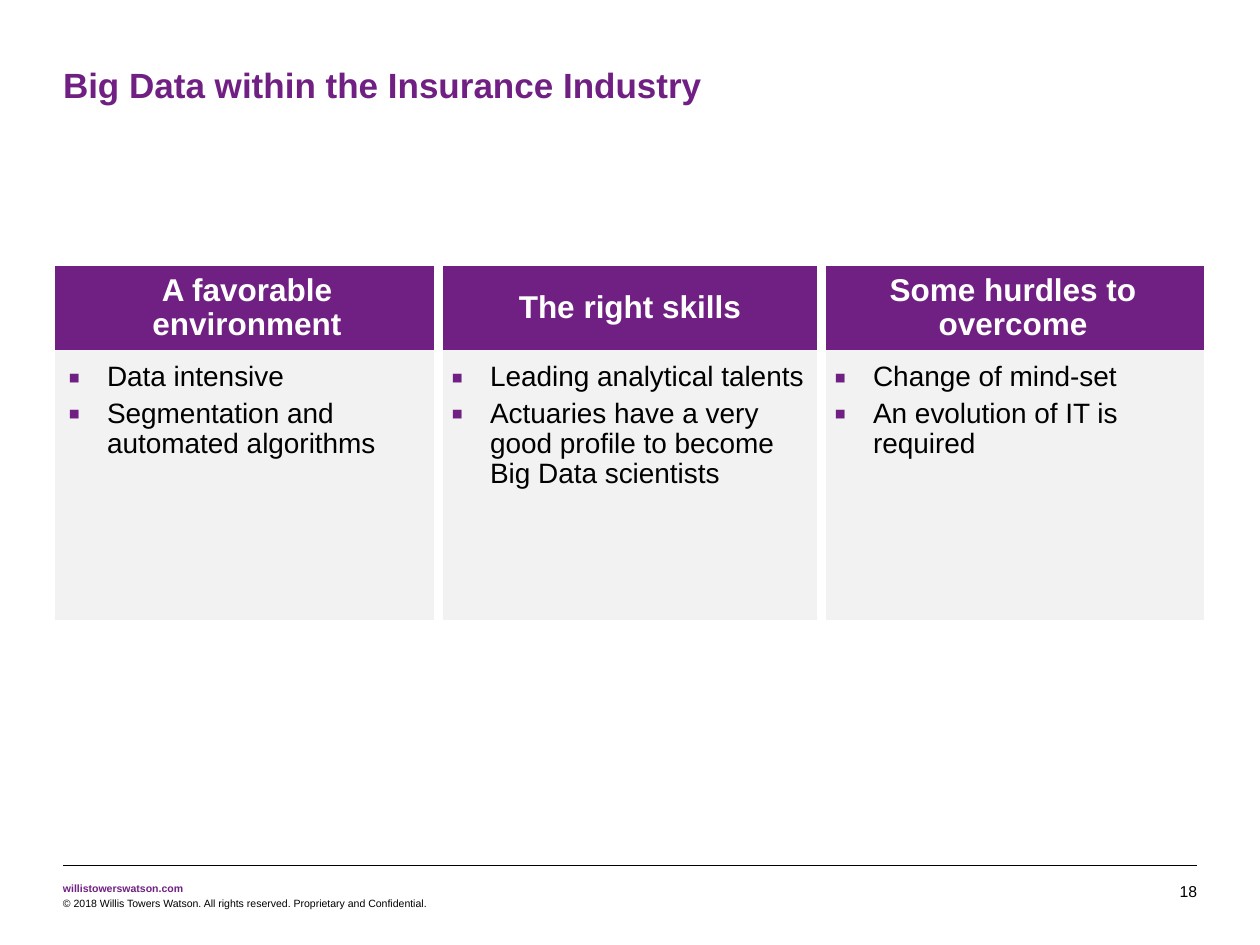
from pptx import Presentation
from pptx.dml.color import RGBColor
from pptx.enum.shapes import MSO_CONNECTOR
from pptx.enum.text import MSO_ANCHOR, MSO_AUTO_SIZE, PP_ALIGN
from pptx.oxml.ns import qn
from pptx.util import Inches, Pt
from lxml.etree import SubElement

PURPLE = RGBColor(0x70, 0x20, 0x82)
GREY = RGBColor(0xF2, 0xF2, 0xF2)
WHITE = RGBColor(0xFF, 0xFF, 0xFF)
BLACK = RGBColor(0, 0, 0)

prs = Presentation()
prs.slide_width, prs.slide_height = Inches(10), Inches(7.5)
slide = prs.slides.add_slide(prs.slide_layouts[5])
MARGIN = Inches(0.5)
CONTENT_WIDTH = prs.slide_width - 2 * MARGIN
FOOTER_TOP = Inches(7)


def write(frame, text, size, color=BLACK, bold=False, align=PP_ALIGN.LEFT,
          anchor=MSO_ANCHOR.TOP, inset=0, wrap=True, after=0, spacing=None,
          bulleted=False):
    """Fill a text frame, one paragraph for each line of text."""
    frame.word_wrap = wrap
    frame.vertical_anchor = anchor
    if inset is not None:
        frame.margin_left = frame.margin_right = inset
        frame.margin_top = frame.margin_bottom = inset
    for number, line in enumerate(text.split("\n")):
        paragraph = frame.add_paragraph() if number else frame.paragraphs[0]
        paragraph.alignment = align
        paragraph.space_before, paragraph.space_after = Pt(0), Pt(after)
        if spacing:
            paragraph.line_spacing = spacing
        if bulleted:
            paragraph.level = 2
            props = paragraph._p.get_or_add_pPr()
            props.set("marL", str(Inches(0.31)))
            props.set("indent", str(-Inches(0.31)))
            bullet_color = SubElement(props, qn("a:buClr"))
            SubElement(bullet_color, qn("a:srgbClr"), val=str(PURPLE))
            SubElement(props, qn("a:buSzPct"), val="125000")
            SubElement(props, qn("a:buFont"), typeface="Arial")
            SubElement(props, qn("a:buChar"), char="▪")
        run = paragraph.add_run()
        run.text = line
        run.font.name, run.font.size = "Arial", Pt(size)
        run.font.bold, run.font.color.rgb = bold, color


def add_white_border(cell, side):
    border = SubElement(cell._tc.get_or_add_tcPr(), qn("a:" + side), w=str(Pt(6)))
    fill = SubElement(border, qn("a:solidFill"))
    SubElement(fill, qn("a:srgbClr"), val=str(WHITE))


# Title
title = slide.shapes.title
title.left, title.top = MARGIN, MARGIN
title.width, title.height = CONTENT_WIDTH, Inches(0.34)
title.text_frame.auto_size = MSO_AUTO_SIZE.NONE
write(title.text_frame, "Big Data within the Insurance Industry", 20,
      color=PURPLE, bold=True)

# Three themes: heading above bullet points
themes = [
    ("A favorable environment",
     "Data intensive\nSegmentation and automated algorithms"),
    ("The right skills",
     "Leading analytical talents\n"
     "Actuaries have a very good profile to become Big Data scientists"),
    ("Some hurdles to overcome",
     "Change of mind-set\nAn evolution of IT is required"),
]
COLUMN_WIDTH = Inches(3.04)
HEADING_HEIGHT, POINTS_HEIGHT = Inches(0.67), Inches(2.14)
table_width = len(themes) * COLUMN_WIDTH
table = slide.shapes.add_table(
    2, len(themes), (prs.slide_width - table_width) // 2, Inches(2.11),
    table_width, HEADING_HEIGHT + POINTS_HEIGHT).table
table.first_row = table.horz_banding = False
no_style = "{2D5ABB26-0587-4C30-8999-92F81FD0307C}"
table._tbl.tblPr.find(qn("a:tableStyleId")).text = no_style
table.rows[0].height, table.rows[1].height = HEADING_HEIGHT, POINTS_HEIGHT

for column, (heading, points) in enumerate(themes):
    table.columns[column].width = COLUMN_WIDTH
    for row, background in enumerate((PURPLE, GREY)):
        cell = table.cell(row, column)
        if column > 0:
            add_white_border(cell, "lnL")
        if column < len(themes) - 1:
            add_white_border(cell, "lnR")
        cell.fill.solid()
        cell.fill.fore_color.rgb = background
    heading_cell, points_cell = table.cell(0, column), table.cell(1, column)
    heading_cell.vertical_anchor = MSO_ANCHOR.MIDDLE
    write(heading_cell.text_frame, heading, 18, color=WHITE, bold=True,
          align=PP_ALIGN.CENTER, anchor=None, inset=None, spacing=0.97)
    points_cell.margin_left = points_cell.margin_right = Inches(0.1)
    points_cell.margin_top = points_cell.margin_bottom = Inches(0.1)
    write(points_cell.text_frame, points, 16, anchor=None, inset=None,
          after=3.5, spacing=0.97, bulleted=True)
    for cell in (heading_cell, points_cell):
        body = cell.text_frame._txBody.bodyPr
        body.attrib.clear()

# Footer rule
rule_y = Inches(6.87)
rule = slide.shapes.add_connector(
    MSO_CONNECTOR.STRAIGHT, MARGIN, rule_y, MARGIN + CONTENT_WIDTH, rule_y)
rule.line.color.rgb, rule.line.width = BLACK, Pt(0.25)
SubElement(rule._element.spPr, qn("a:effectLst"))

# Footer texts: address, copyright line, page number
page_width = Inches(0.42)
footer = [
    ("willistowerswatson.com", MARGIN, FOOTER_TOP, Inches(0.96), Inches(0.1),
     dict(size=6, color=PURPLE, bold=True, wrap=False, after=2)),
    ("© 2018 Willis Towers Watson. All rights reserved. Proprietary and Confidential.",
     MARGIN, Inches(7.12), Inches(5.77), Inches(0.1), dict(size=6)),
    ("18", MARGIN + CONTENT_WIDTH - page_width, FOOTER_TOP, page_width, Inches(0.15),
     dict(size=9, align=PP_ALIGN.RIGHT, anchor=MSO_ANCHOR.BOTTOM)),
]
for text, left, top, width, height, text_format in footer:
    box = slide.shapes.add_textbox(left, top, width, height)
    write(box.text_frame, text, **text_format)

prs.save("out.pptx")
